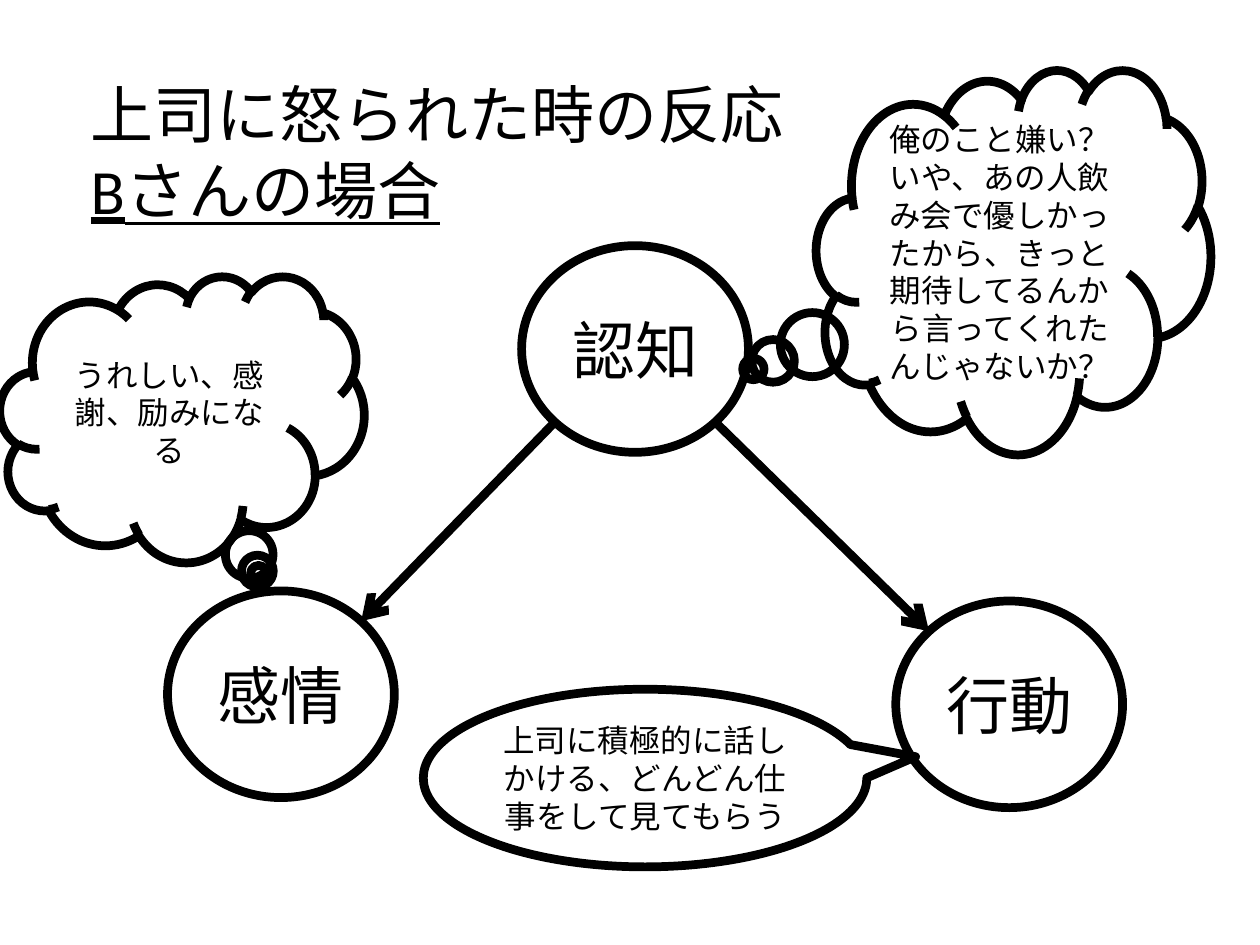
from dataclasses import dataclass
from math import cos, pi, sin

from pptx import Presentation
from pptx.dml.color import RGBColor
from pptx.enum.shapes import MSO_CONNECTOR, MSO_SHAPE
from pptx.enum.text import MSO_ANCHOR, MSO_AUTO_SIZE, PP_ALIGN
from pptx.oxml.ns import qn
from pptx.util import Inches, Pt
from lxml.etree import SubElement


@dataclass(frozen=True)
class Theme:
    font: str = "Calibri"
    ink: RGBColor = RGBColor(0, 0, 0)
    large: Pt = Pt(36)
    small: Pt = Pt(18)
    stroke: Pt = Pt(5)


class ReactionSlide:
    """Draws the parts of a reaction diagram in one theme."""

    def __init__(self, slide, theme):
        self.slide = slide
        self.theme = theme

    def style_text(self, frame, size, align):
        frame.word_wrap = True
        for paragraph in frame.paragraphs:
            paragraph.alignment = align
            for run in paragraph.runs:
                run.font.name = self.theme.font
                run.font.size = size
                run.font.color.rgb = self.theme.ink

    def style_line(self, line):
        line.color.rgb = self.theme.ink
        line.width = self.theme.stroke

    def title(self, text, left, top, width, height):
        heading = self.slide.shapes.title
        heading.left, heading.top = Inches(left), Inches(top)
        heading.width, heading.height = Inches(width), Inches(height)
        frame = heading.text_frame
        frame.text = text
        frame.vertical_anchor = MSO_ANCHOR.TOP
        frame.auto_size = MSO_AUTO_SIZE.SHAPE_TO_FIT_TEXT
        self.style_text(frame, self.theme.large, PP_ALIGN.LEFT)
        frame.paragraphs[-1].runs[0].font.underline = True

    def outline(self, kind, text, size, left, top, width, height):
        bubble = self.slide.shapes.add_shape(
            kind, Inches(left), Inches(top), Inches(width), Inches(height))
        bubble.shadow.inherit = False
        bubble.fill.background()
        self.style_line(bubble.line)
        bubble.text_frame.text = text
        bubble.text_frame.vertical_anchor = MSO_ANCHOR.MIDDLE
        self.style_text(bubble.text_frame, size, PP_ALIGN.CENTER)
        return bubble

    def node(self, text, left, top):
        return self.outline(
            MSO_SHAPE.OVAL, text, self.theme.large, left, top, 1.8, 1.64)

    def callout(self, kind, text, box, pointer):
        bubble = self.outline(kind, text, self.theme.small, *box)
        for index, offset in enumerate(pointer):
            bubble.adjustments[index] = offset

    def rim(self, node, degrees):
        angle = degrees * pi / 180
        return (int(node.left + node.width / 2 * (1 + cos(angle))),
                int(node.top + node.height / 2 * (1 + sin(angle))))

    def arrow(self, source, source_angle, target, target_angle):
        link = self.slide.shapes.add_connector(
            MSO_CONNECTOR.STRAIGHT,
            *self.rim(source, source_angle), *self.rim(target, target_angle))
        self.style_line(link.line)
        properties = link._element.spPr
        SubElement(properties.find(qn("a:ln")), qn("a:tailEnd"), type="arrow")
        SubElement(properties, qn("a:effectLst"))


def main():
    deck = Presentation()
    deck.slide_width, deck.slide_height = Inches(10), Inches(7.5)
    page = ReactionSlide(deck.slides.add_slide(deck.slide_layouts[5]), Theme())

    cognition = page.node("認知", 4.14, 1.95)
    emotion = page.node("感情", 1.33, 4.69)
    action = page.node("行動", 7.11, 4.77)
    page.arrow(cognition, 135, emotion, -45)
    page.arrow(cognition, 45, action, -135)

    page.title("上司に怒られた時の反応\nBさんの場合", 0.62, 0.55, 8.59, 1.31)

    cloud = MSO_SHAPE.CLOUD_CALLOUT
    page.callout(
        cloud,
        "俺のこと嫌い？いや、あの人飲み会で優しかったから、"
        "きっと期待してるんから言ってくれたんじゃないか？",
        (6.48, 0.55, 3.13, 3.05), (-0.66, 0.28))
    page.callout(
        cloud, "うれしい、感謝、励みになる",
        (0, 2.19, 2.89, 2.27), (0.21, 0.54))
    page.callout(
        MSO_SHAPE.OVAL_CALLOUT,
        "上司に積極的に話しかける、どんどん仕事をして見てもらう",
        (3.36, 5.47, 3.52, 1.41), (0.61, -0.12))

    deck.save("out.pptx")


if __name__ == "__main__":
    main()
